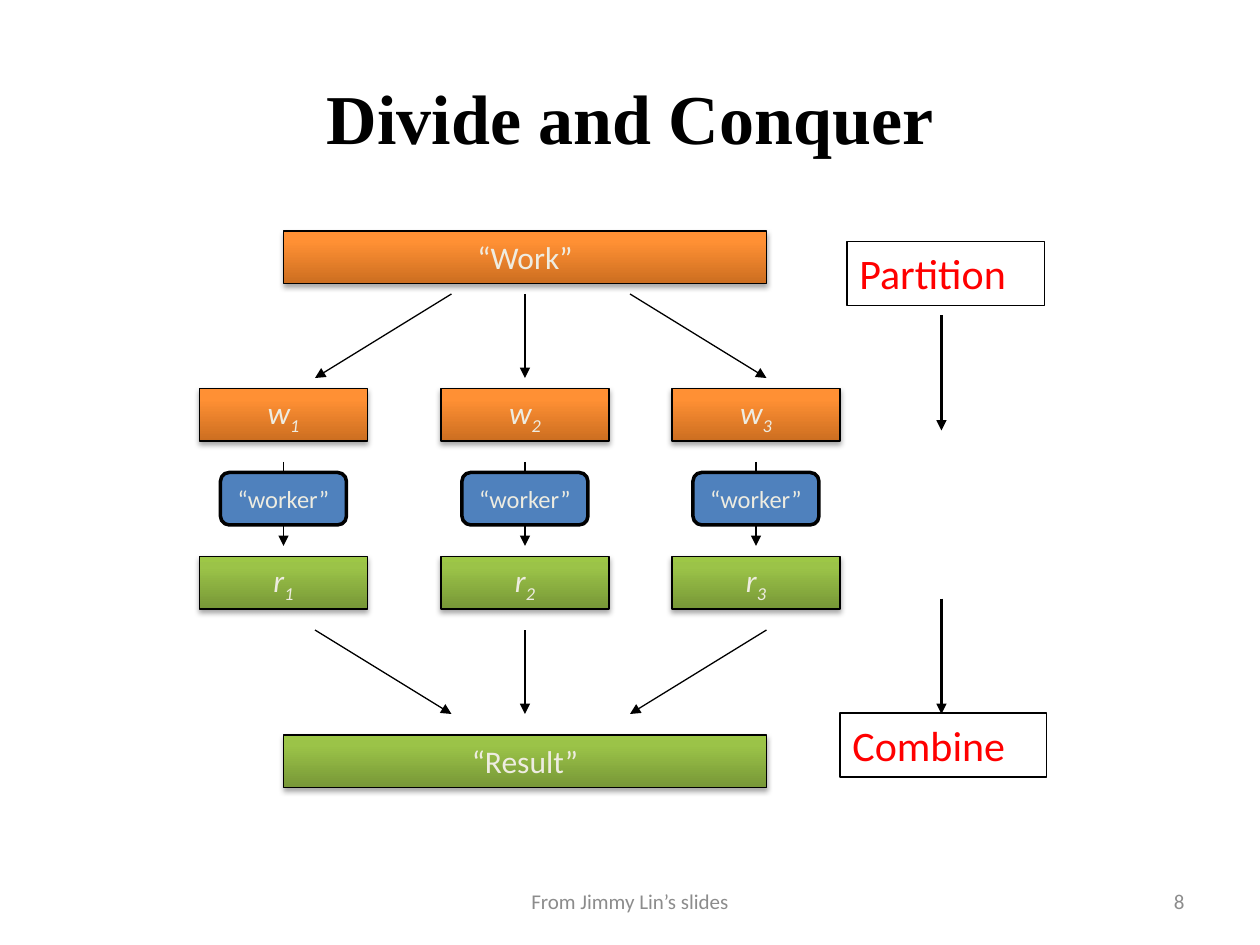
from copy import deepcopy

from lxml import etree
from pptx import Presentation
from pptx.dml.color import RGBColor
from pptx.enum import shapes, text
from pptx.oxml import ns
from pptx.util import Pt

COLORS = {
    "black": "000000", "cream": "EEECE1", "blue": "4F81BD",
    "red": "FF0000", "gray": "8C8C8C",
}
GRADIENTS = {
    "orange": [(0, "CC6E20"), (0.8, "FF9034"), (1, "FF9136")],
    "green": [(0, "779737"), (0.8, "9BC348"), (1, "9DC746")],
}
CENTER, RIGHT = text.PP_ALIGN.CENTER, text.PP_ALIGN.RIGHT
BAR_HEIGHT = 30


def rgb(name):
    return RGBColor.from_string(COLORS[name])


def add_xml(parent, tag, **attributes):
    return etree.SubElement(parent, ns.qn(tag), attributes)


def outline(item, width):
    item.line.color.rgb = rgb("black")
    item.line.width = Pt(width)


def write(frame, words, size, color, align=None, font="Calibri", anchor=text.MSO_ANCHOR.MIDDLE):
    frame.vertical_anchor = anchor
    paragraph = frame.paragraphs[0]
    paragraph.text = words
    paragraph.alignment = align
    paragraph.font.size = Pt(size)
    paragraph.font.name = font
    paragraph.font.color.rgb = rgb(color)
    return paragraph


def add_bar(slide, left, top, width, gradient, label, subscript=""):
    """A shaded bar with a soft shadow; an indexed label is set in italics."""
    bar = slide.shapes.add_shape(
        shapes.MSO_SHAPE.RECTANGLE, Pt(left), Pt(top), Pt(width), Pt(BAR_HEIGHT))
    bar.fill.gradient()
    bar.fill.gradient_angle = 90
    stops = bar._element.spPr.find(".//" + ns.qn("a:gsLst"))
    stops.append(deepcopy(stops[-1]))
    for stop, (position, color) in zip(bar.fill.gradient_stops, GRADIENTS[gradient]):
        stop.position = position
        stop.color.rgb = RGBColor.from_string(color)
    outline(bar, 0.75)
    bar.shadow.inherit = False
    effects = bar._element.spPr.find(ns.qn("a:effectLst"))
    shadow = add_xml(effects, "a:outerShdw", blurRad="40000", dist="23000",
                     dir="5400000", rotWithShape="0")
    tint = add_xml(shadow, "a:srgbClr", val=COLORS["black"])
    add_xml(tint, "a:alpha", val="35000")

    paragraph = write(bar.text_frame, label, 18, "cream", CENTER)
    if subscript:
        paragraph.font.italic = True
        index = paragraph.add_run()
        index.text = subscript
        index.font._element.set("baseline", "-25000")


def add_arrow(slide, x1, y1, x2, y2, width=0.75):
    arrow = slide.shapes.add_connector(
        shapes.MSO_CONNECTOR.STRAIGHT, Pt(x1), Pt(y1), Pt(x2), Pt(y2))
    outline(arrow, width)
    add_xml(arrow.line._get_or_add_ln(), "a:tailEnd", type="triangle")
    add_xml(arrow._element.spPr, "a:effectLst")


def add_worker(slide, left, top):
    worker = slide.shapes.add_shape(
        shapes.MSO_SHAPE.ROUNDED_RECTANGLE, Pt(left), Pt(top), Pt(72), Pt(BAR_HEIGHT))
    worker.shadow.inherit = False
    worker.fill.solid()
    worker.fill.fore_color.rgb = rgb("blue")
    outline(worker, 2)
    worker.text_frame.word_wrap = False
    write(worker.text_frame, "“worker”", 14, "cream", CENTER)


def add_flow(slide, left, top):
    """Work split over three workers, whose results are joined again."""
    centers = [left + 48, left + 186, left + 318]
    fan = [(left + 144, left + 66), (centers[1], centers[1]), (left + 246, left + 324)]

    add_bar(slide, left + 48, top, 276, "orange", "“Work”")
    for inner, outer in fan:
        add_arrow(slide, inner, top + 36, outer, top + 84)
        add_arrow(slide, outer, top + 228, inner, top + 276)
    for number, center in enumerate(centers, 1):
        add_bar(slide, center - 48, top + 90, 96, "orange", "w", str(number))
        add_arrow(slide, center, top + 132, center, top + 180)
        add_worker(slide, center - 36, top + 138)
        add_bar(slide, center - 48, top + 186, 96, "green", "r", str(number))
    add_bar(slide, left + 48, top + 288, 276, "green", "“Result”")


def add_phase(slide, left, top, width, label):
    box = slide.shapes.add_textbox(Pt(left), Pt(top), Pt(width), Pt(36.5))
    outline(box, 0.75)
    box.text_frame.word_wrap = False
    write(box.text_frame, label, 24, "red", anchor=text.MSO_ANCHOR.TOP)


def add_phases(slide, left, top):
    add_phase(slide, left + 4, top, 113, "Partition")
    add_phase(slide, left, top + 269.5, 118, "Combine")
    for start in (42, 204):
        add_arrow(slide, left + 58, top + start, left + 58, top + start + 66, 1.5)


def add_title(slide, left, top, width, height):
    title = slide.shapes.title
    title.left, title.top, title.width, title.height = map(Pt, (left, top, width, height))
    heading = write(title.text_frame, "Divide and Conquer", 40, "black", CENTER,
                    "Times New Roman")
    heading.font.bold = True


def add_footer(slide, top):
    for left, width, words, align in (
            (246, 228, "From Jimmy Lin’s slides", CENTER), (516, 168, "8", RIGHT)):
        box = slide.shapes.add_textbox(Pt(left), Pt(top), Pt(width), Pt(28.75))
        box.text_frame.word_wrap = True
        write(box.text_frame, words, 12, "gray", align)


def main():
    deck = Presentation()
    deck.slide_width, deck.slide_height = Pt(720), Pt(540)
    slide = deck.slides.add_slide(deck.slide_layouts[5])
    add_title(slide, 36, 21.6, 648, 90)
    add_flow(slide, 114, 132)
    add_phases(slide, 480, 138)
    add_footer(slide, 500.5)
    deck.save("out.pptx")


if __name__ == "__main__":
    main()
